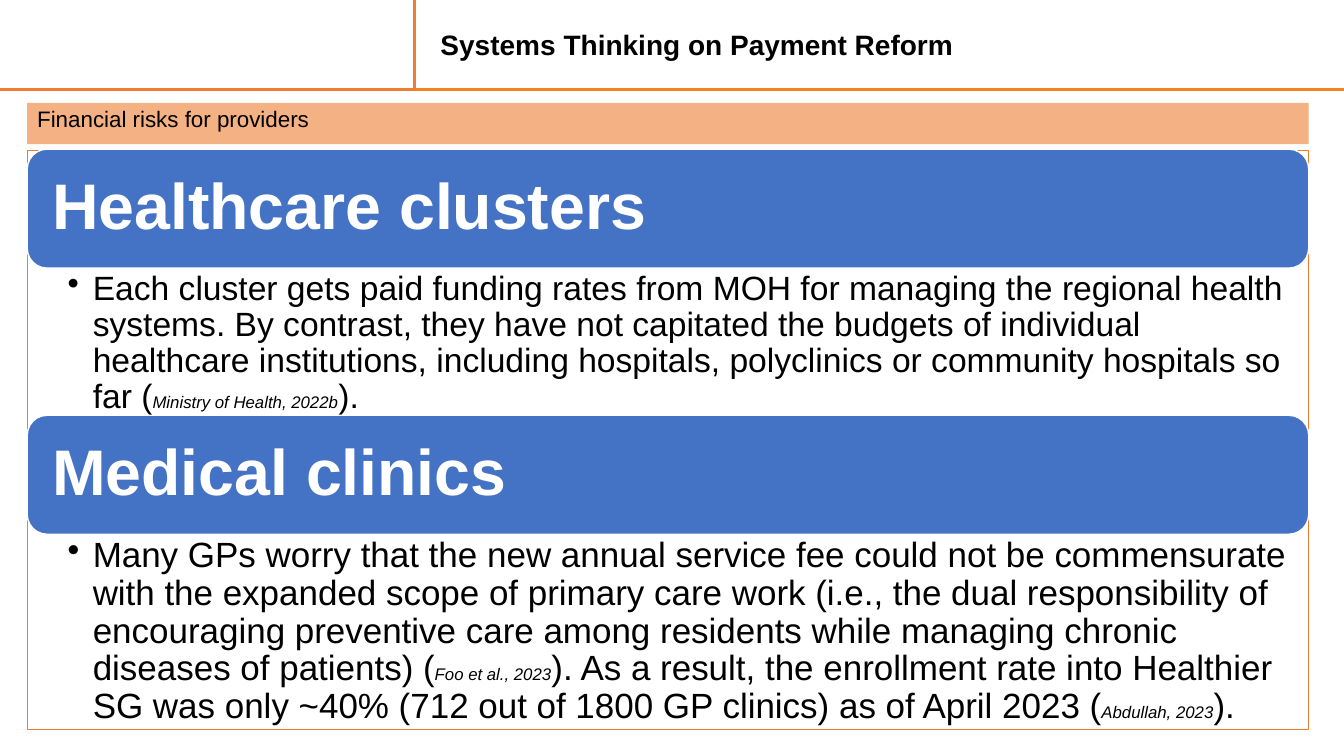
from pptx import Presentation
from pptx.dml.color import RGBColor
from pptx.enum.shapes import MSO_CONNECTOR, MSO_SHAPE
from pptx.enum.text import MSO_ANCHOR, PP_ALIGN
from pptx.oxml.ns import qn
from pptx.util import Inches, Pt
from lxml import etree

RECTANGLE = MSO_SHAPE.RECTANGLE
ROUNDED = MSO_SHAPE.ROUNDED_RECTANGLE
STRAIGHT = MSO_CONNECTOR.STRAIGHT
TOP, MIDDLE = MSO_ANCHOR.TOP, MSO_ANCHOR.MIDDLE
LEFT = PP_ALIGN.LEFT

BLACK, WHITE = "000000", "FFFFFF"
BLUE, ORANGE, RULE_ORANGE, PEACH = "4472C4", "ED7D31", "F58220", "F4B183"
SLIDE_WIDTH, SLIDE_HEIGHT = 13.33, 7.5
MARGIN, CONTENT_WIDTH = 0.27, 12.71
RULE_TOP, DIVIDER_LEFT = 0.89, 4.11
FIRST_TOP, SECTION_STEP, HEADING_HEIGHT = 1.48, 2.64, 1.18
CITATION_SIZE = 12

SECTIONS = [
    ("Healthcare clusters", 24, 1.46, [
        ("Each cluster gets paid funding rates from MOH for managing the regional health "
         "systems. By contrast, they have not capitated the budgets of individual healthcare "
         "institutions, including hospitals, polyclinics or community hospitals so far (", False),
        ("Ministry of Health, 2022b", True),
        (").", False),
    ]),
    ("Medical clinics", 25, 1.87, [
        ("Many GPs worry that the new annual service fee could not be commensurate with the "
         "expanded scope of primary care work (i.e., the dual responsibility of encouraging "
         "preventive care among residents while managing chronic diseases of patients) (", False),
        ("Foo et al., 2023", True),
        ("). As a result, the enrollment rate into Healthier SG was only ~40% "
         "(712 out of 1800 GP clinics) as of April 2023 (", False),
        ("Abdullah, 2023", True),
        (").", False),
    ]),
]


def color(value):
    return RGBColor.from_string(value)


class SlideBuilder:
    font = "Arial"
    line_spacing = 0.9

    def __init__(self, page):
        self.page = page

    def outline(self, shape, line, weight):
        if line:
            shape.line.color.rgb = color(line)
            shape.line.width = Pt(weight)
        else:
            shape.line.fill.background()

    def rule(self, left, top, right, line, weight):
        connector = self.page.shapes.add_connector(
            STRAIGHT, Inches(left), Inches(top), Inches(right), Inches(top))
        self.outline(connector, line, weight)
        etree.SubElement(connector._element.spPr, qn("a:effectLst"))

    def corner(self, right, bottom, line, weight):
        builder = self.page.shapes.build_freeform(Inches(right), 0)
        builder.add_line_segments(
            [(Inches(right), Inches(bottom)), (0, Inches(bottom))], close=False)
        shape = builder.convert_to_shape()
        shape.shadow.inherit = False
        shape.fill.background()
        self.outline(shape, line, weight)

    def shape(self, kind, left, top, width, height, fill=None, line=None, weight=1):
        shape = self.page.shapes.add_shape(
            kind, Inches(left), Inches(top), Inches(width), Inches(height))
        shape.shadow.inherit = False
        if fill:
            shape.fill.solid()
            shape.fill.fore_color.rgb = color(fill)
        else:
            shape.fill.background()
        self.outline(shape, line, weight)
        return shape

    def text_box(self, left, top, width, height):
        return self.page.shapes.add_textbox(
            Inches(left), Inches(top), Inches(width), Inches(height))

    def frame(self, box, anchor, insets):
        frame = box.text_frame
        frame.word_wrap = True
        frame.vertical_anchor = anchor
        (frame.margin_left, frame.margin_top,
         frame.margin_right, frame.margin_bottom) = map(Inches, insets)
        para = frame.paragraphs[0]
        para.alignment = LEFT
        para.line_spacing = self.line_spacing
        return para

    def style(self, span, size, ink, bold=False, italic=False):
        span.font.name = self.font
        span.font.size = Pt(size)
        span.font.color.rgb = color(ink)
        span.font.bold = bold
        span.font.italic = italic

    def text(self, box, text, size, ink=BLACK, bold=False, anchor=MIDDLE,
             insets=(0.1, 0.05, 0.1, 0.05)):
        para = self.frame(box, anchor, insets)
        para.text = text
        self.style(para.runs[0], size, ink, bold)

    def bullet(self, box, spans, size):
        para = self.frame(box, TOP, (0.4, 0.03, 0.19, 0.03))
        para.level = 1
        properties = para._p.get_or_add_pPr()
        properties.set("marL", str(Inches(0.25)))
        properties.set("indent", str(Inches(-0.25)))
        etree.SubElement(properties, qn("a:buChar"), char="•")
        for text, is_citation in spans:
            span = para.add_run()
            span.text = text
            self.style(span, CITATION_SIZE if is_citation else size, BLACK, italic=is_citation)


def main():
    deck = Presentation()
    deck.slide_width = Inches(SLIDE_WIDTH)
    deck.slide_height = Inches(SLIDE_HEIGHT)
    builder = SlideBuilder(deck.slides.add_slide(deck.slide_layouts[6]))

    builder.rule(2.47, RULE_TOP, SLIDE_WIDTH, RULE_ORANGE, 2)
    builder.corner(DIVIDER_LEFT, RULE_TOP, ORANGE, 2)
    title = builder.text_box(4.27, 0.26, 8.92, 0.4)
    builder.text(title, "Systems Thinking on Payment Reform", 20, bold=True)

    builder.shape(RECTANGLE, MARGIN, 1.49, CONTENT_WIDTH, 5.75, line=ORANGE, weight=0.5)
    banner = builder.shape(RECTANGLE, MARGIN, 1.02, CONTENT_WIDTH, 0.41, fill=PEACH)
    builder.text(banner, "Financial risks for providers", 16, anchor=TOP)

    for index, (heading, size, body_height, spans) in enumerate(SECTIONS):
        top = FIRST_TOP + index * SECTION_STEP
        bar = builder.shape(ROUNDED, MARGIN, top, CONTENT_WIDTH, HEADING_HEIGHT,
                            fill=BLUE, line=WHITE)
        builder.text(bar, heading, 46, WHITE, bold=True, insets=(0.19, 0.19, 0.19, 0.19))
        body = builder.text_box(MARGIN, top + HEADING_HEIGHT, CONTENT_WIDTH, body_height)
        builder.bullet(body, spans, size)

    deck.save("out.pptx")


if __name__ == "__main__":
    main()
